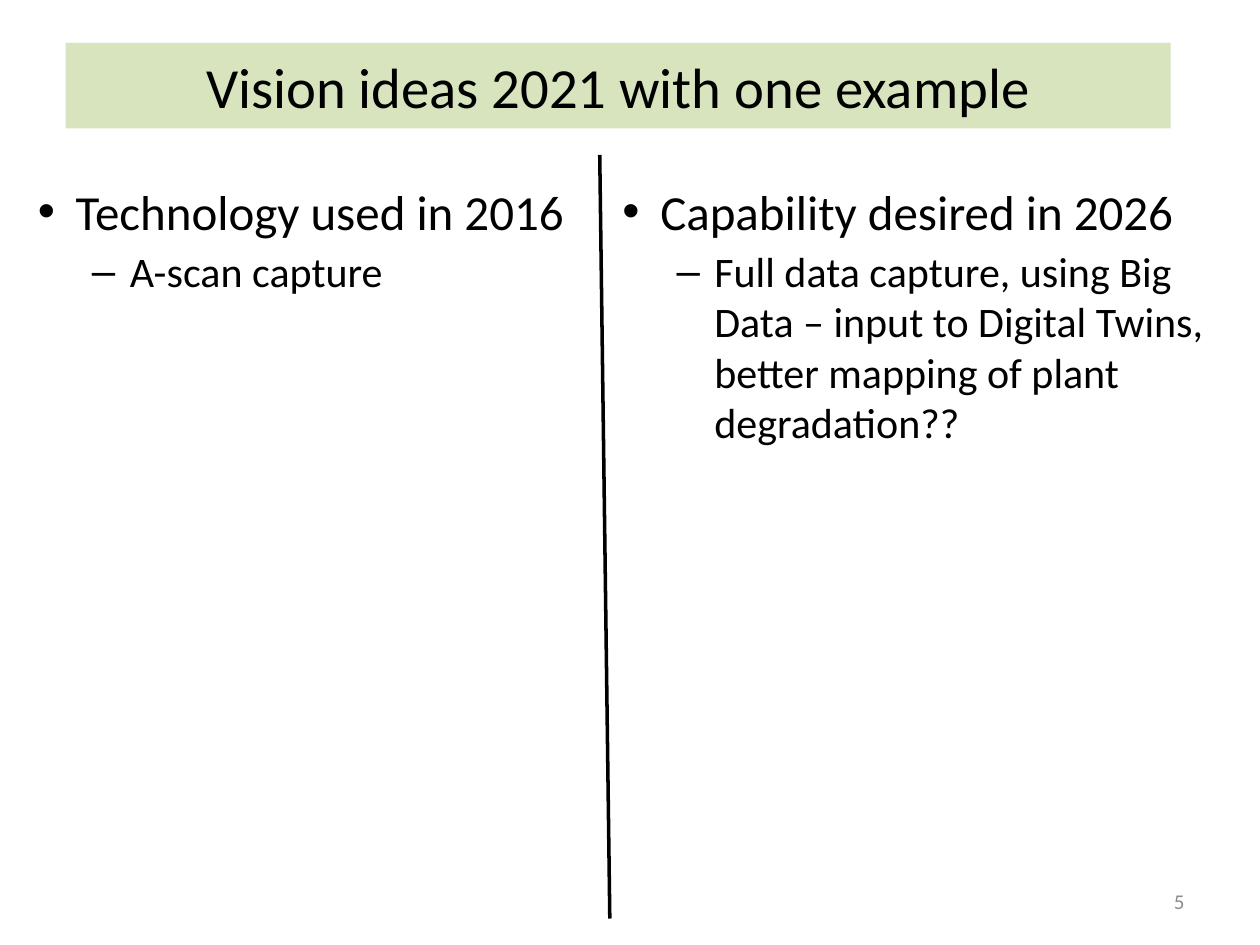
"""Build the vision ideas slide: two bulleted columns either side of a dividing line."""
from lxml.etree import SubElement
from pptx import Presentation
from pptx.dml.color import RGBColor
from pptx.enum.shapes import MSO_CONNECTOR as Connector
from pptx.enum.text import MSO_ANCHOR as Anchor, MSO_AUTO_SIZE as AutoSize, PP_ALIGN as Align
from pptx.oxml.ns import qn
from pptx.util import Inches, Pt

TITLE = "Vision ideas 2021 with one example"
PAGE = "5"
COLUMNS = [
    ((0.2, 1.39, 4.41, 5.75), ["Technology used in 2016", "A-scan capture"]),
    ((4.84, 1.39, 4.96, 5.59), [
        "Capability desired in 2026",
        "Full data capture, using Big Data – input to Digital Twins, "
        "better mapping of plant degradation??",
    ]),
]
LEVELS = [("•", 0.3, 28), ("–", 0.73, 24)]
HANGING = 0.3
DIVIDER = (4.76, 1.23, 4.84, 7.29)


def color(code):
    return RGBColor.from_string(code)


def place(shape, box):
    shape.left, shape.top, shape.width, shape.height = map(Inches, box)


def style(paragraph, size, code="000000"):
    for run in paragraph.runs:
        run.font.name = "Calibri"
        run.font.size = Pt(size)
        run.font.color.rgb = color(code)


def add_heading(heading):
    place(heading, (0.52, 0.34, 8.77, 0.68))
    heading.fill.solid()
    heading.fill.fore_color.rgb = color("D7E4BD")
    frame = heading.text_frame
    frame.text = TITLE
    frame.auto_size = AutoSize.NONE
    frame.vertical_anchor = Anchor.MIDDLE
    frame.paragraphs[0].alignment = Align.CENTER
    style(frame.paragraphs[0], 32.4)


def add_column(column, box, items):
    place(column, box)
    frame = column.text_frame
    frame.text = "\n".join(items)
    frame.auto_size = AutoSize.NONE
    for level, (paragraph, (bullet, indent, size)) in enumerate(zip(frame.paragraphs, LEVELS)):
        paragraph.level = level
        paragraph.space_before = Pt(3)
        properties = paragraph._p.get_or_add_pPr()
        properties.set("marL", str(Inches(indent)))
        properties.set("indent", str(-Inches(HANGING)))
        SubElement(properties, qn("a:buChar"), char=bullet)
        style(paragraph, size)


def add_page_number(slide):
    frame = slide.shapes.add_textbox(*map(Inches, (7.17, 6.95, 2.33, 0.4))).text_frame
    frame.text = PAGE
    frame.word_wrap = True
    frame.vertical_anchor = Anchor.MIDDLE
    frame.paragraphs[0].alignment = Align.RIGHT
    style(frame.paragraphs[0], 12, "8C8C8C")


def add_divider(slide):
    divider = slide.shapes.add_connector(Connector.STRAIGHT, *map(Inches, DIVIDER))
    divider.line.color.rgb = color("000000")
    divider.line.width = Pt(2)
    SubElement(divider._element.spPr, qn("a:effectLst"))


def main():
    deck = Presentation()
    deck.slide_width, deck.slide_height = Inches(10), Inches(7.5)
    slide = deck.slides.add_slide(deck.slide_layouts.get_by_name("Two Content"))
    heading, *columns = slide.placeholders
    add_heading(heading)
    for column, (box, items) in zip(columns, COLUMNS):
        add_column(column, box, items)
    add_page_number(slide)
    add_divider(slide)
    deck.save("out.pptx")


if __name__ == "__main__":
    main()
